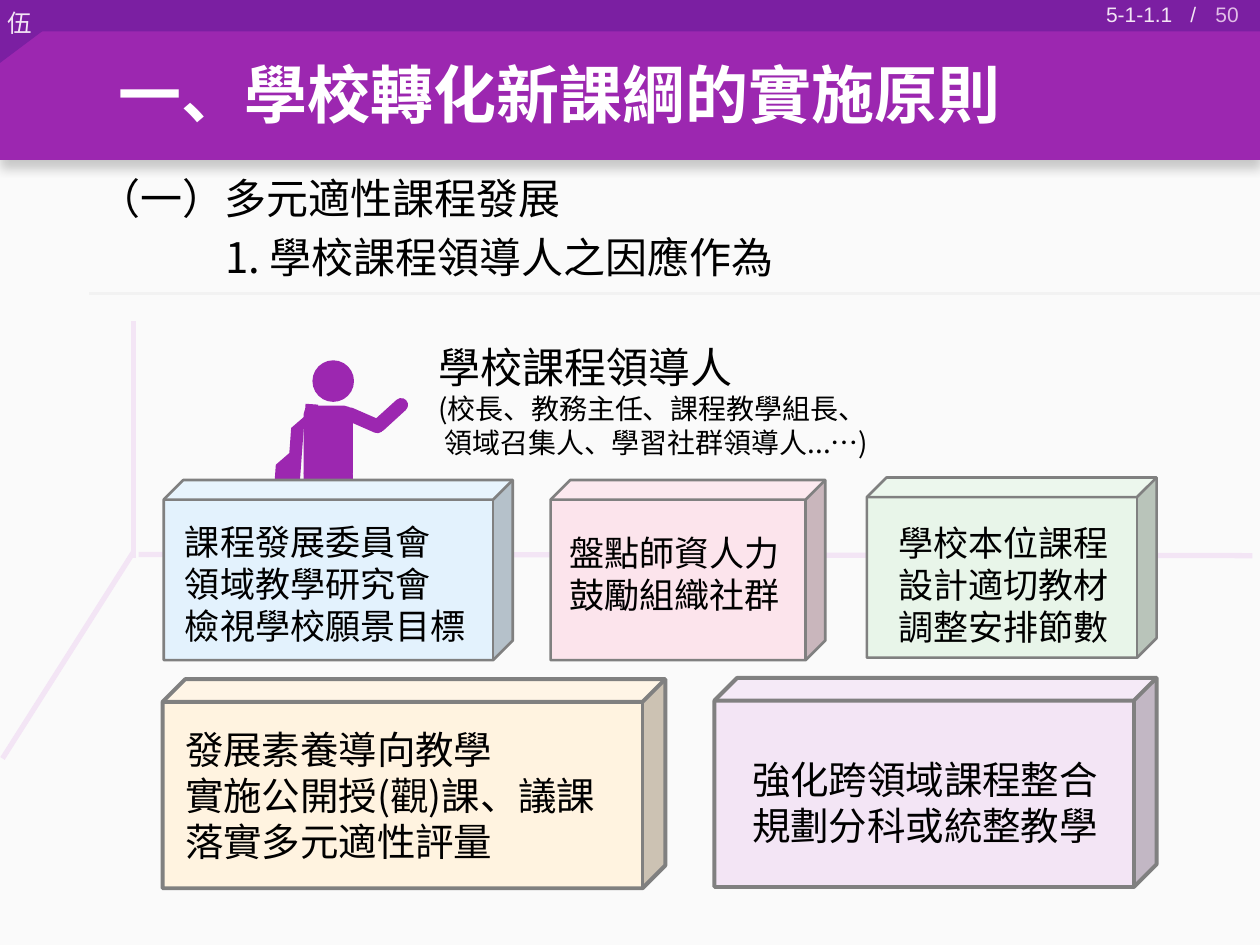
from dataclasses import dataclass
from typing import NamedTuple

from lxml.etree import SubElement
from pptx import Presentation
from pptx.dml.color import RGBColor
from pptx.enum.shapes import MSO_CONNECTOR as Connector, MSO_SHAPE as Preset
from pptx.enum.text import MSO_ANCHOR as Anchor, MSO_AUTO_SIZE as AutoSize, PP_ALIGN as Align
from pptx.oxml import parse_xml
from pptx.oxml.ns import nsdecls, qn
from pptx.util import Inches, Pt

CJK, LATIN = "Noto Sans CJK SC", "Arial"
BLACK, WHITE, PAPER, GREY, RULE = "000000", "FFFFFF", "FAFAFA", "808080", "F2F2F2"
PURPLE, DEEP_PURPLE, PALE_PURPLE, LILAC = "9C27B0", "7B1FA2", "F3E5F5", "E1BEE7"
COLUMNS, ROWS = 100, 75

presentation = Presentation()
presentation.slide_width, presentation.slide_height = Inches(10), Inches(7.5)
CELL = presentation.slide_width / COLUMNS
slide = presentation.slides.add_slide(presentation.slide_layouts[1])


class Area(NamedTuple):
    """Left, top, width and height in grid cells."""
    left: float
    top: float
    width: float
    height: float


@dataclass
class Line:
    text: str
    size: float
    indent: float = 0


@dataclass
class Block:
    area: Area
    fill: str
    border: float
    text_area: Area
    size: int
    lines: tuple[str, ...]


@dataclass
class Limb:
    area: Area
    preset: Preset = Preset.ROUNDED_RECTANGLE
    rounding: float | None = 0.5
    rotation: float = 0


BLOCKS = (
    Block(Area(13, 38.1, 27.7, 14.3), "E3F2FD", 1.5, Area(13.7, 40.5, 25.3, 11.1), 20,
          ("課程發展委員會", "領域教學研究會", "檢視學校願景目標")),
    Block(Area(43.7, 38.1, 21.8, 14.3), "FCE4EC", 1.5, Area(44.2, 41.4, 19.2, 7.7), 20,
          ("盤點師資人力", "鼓勵組織社群")),
    Block(Area(68.8, 37.9, 23, 14.3), "E8F5E9", 1.5, Area(70.3, 40.6, 22.3, 11.1), 20,
          ("學校本位課程", "設計適切教材", "調整安排節數")),
    Block(Area(56.7, 53.8, 35.1, 16.6), PALE_PURPLE, 2.25, Area(58.7, 59.2, 30.1, 8.4), 22,
          ("強化跨領域課程整合", "規劃分科或統整教學")),
    Block(Area(12.9, 53.9, 39.9, 16.6), "FFF3E0", 2.25, Area(13.7, 56.8, 38.5, 12.1), 22,
          ("發展素養導向教學", "實施公開授(觀)課、議課", "落實多元適性評量")),
)
LIMBS = (
    Limb(Area(24.8, 28.6, 3.3, 3.3), Preset.FLOWCHART_CONNECTOR, None),
    Limb(Area(24.1, 32.2, 3.9, 6), rounding=0.17),
    Limb(Area(24.1, 36.8, 1.7, 8.8)),
    Limb(Area(26.3, 36.8, 1.7, 8.8)),
    Limb(Area(30.4, 31.2, 1.1, 3.5), rotation=47.7),
    Limb(Area(28.3, 31.6, 1.1, 3.5), rotation=293.6),
)
ARM_START = (24.9, 33.3)
ARM_CURVES = (
    ((25, 32.8), (24.9, 32.5), (24.7, 32.4)),
    ((24.3, 32.2), (23.8, 32.6), (23.7, 32.9)),
    ((22.1, 36), (22.4, 38.3), (22.5, 38.6)),
    ((22.5, 39), (22.7, 39.2), (23, 39.2)),
    ((23.3, 39.2), (23.5, 39), (23.5, 38.7)),
    ((23.7, 37.3), (23.2, 35.7), (24.9, 33.3)),
)


def cells(count: float) -> int:
    return round(count * CELL)


def color(value: str) -> RGBColor:
    return RGBColor.from_string(value)


def apply(target, values: dict) -> None:
    for name, value in values.items():
        setattr(target, name, value)


def place(shape, area: Area) -> None:
    apply(shape, {name: cells(value) for name, value in area._asdict().items()})


def paint(shape, fill: str, border: float = 0):
    shape.shadow.inherit = False
    shape.fill.solid()
    shape.fill.fore_color.rgb = color(fill)
    if border:
        shape.line.color.rgb, shape.line.width = color(GREY), Pt(border)
    else:
        shape.line.fill.background()
    return shape


def add_preset(preset: Preset, area: Area, fill: str, border: float = 0, rounding=None):
    shape = slide.shapes.add_shape(preset, *map(cells, area))
    if rounding is not None:
        shape.adjustments[0] = rounding
    return paint(shape, fill, border)


def add_outline(points: list, fill: str):
    builder = slide.shapes.build_freeform(*points[0], scale=CELL)
    builder.add_line_segments(points[1:], close=True)
    return paint(builder.convert_to_shape(), fill)


def add_line(start: tuple, end: tuple, stroke: str, width: float) -> None:
    line = slide.shapes.add_connector(Connector.STRAIGHT, *map(cells, start + end))
    line.line.color.rgb, line.line.width = color(stroke), Pt(width)
    SubElement(line._element.spPr, qn("a:effectLst"))


def shadow(blur: float, distance: float, opacity: int):
    return parse_xml(
        f'<a:effectLst {nsdecls("a")}><a:outerShdw blurRad="{Pt(blur)}" dist="{Pt(distance)}" '
        f'dir="5400000" algn="t" rotWithShape="0"><a:srgbClr val="{BLACK}">'
        f'<a:alpha val="{opacity * 1000}"/></a:srgbClr></a:outerShdw></a:effectLst>')


def style_run(run, size: float, ink: str, font: str, bold: bool = False) -> None:
    apply(run.font, {"size": Pt(size), "bold": bold, "name": font})
    run.font.color.rgb = color(ink)
    SubElement(run._r.get_or_add_rPr(), qn("a:ea"), typeface=font)


def write_lines(frame, lines: list[Line], space_after: float = 0) -> None:
    """Fill a frame with black text at a fixed line pitch of 1.2 times its size."""
    apply(frame, {"word_wrap": True, "auto_size": AutoSize.NONE, "margin_top": cells(0.8)})
    for number, line in enumerate(lines):
        paragraph = frame.add_paragraph() if number else frame.paragraphs[0]
        properties = paragraph._p.get_or_add_pPr()
        apply(paragraph, {"line_spacing": Pt(line.size * 1.2), "space_before": Pt(0),
                          "space_after": Pt(space_after), "alignment": Align.LEFT})
        properties.set("marL", str(cells(line.indent)))
        properties.set("indent", "0")
        SubElement(properties, qn("a:buNone"))
        run = paragraph.add_run()
        run.text = line.text
        style_run(run, line.size, BLACK, CJK)


def add_text(area: Area, lines: list[Line]) -> None:
    write_lines(slide.shapes.add_textbox(*map(cells, area)).text_frame, lines)


def add_label(area: Area, text: str, size: float, ink: str, font: str, align=Align.LEFT):
    frame = slide.shapes.add_textbox(*map(cells, area)).text_frame
    apply(frame, {"word_wrap": True, "vertical_anchor": Anchor.MIDDLE})
    paragraph = frame.paragraphs[0]
    paragraph.alignment = align
    run = paragraph.add_run()
    run.text = text
    style_run(run, size, ink, font)
    return paragraph


def draw_header() -> None:
    band = add_preset(Preset.RECTANGLE, Area(0, 0, COLUMNS, 12.7), PURPLE)
    band._element.spPr.replace(band._element.spPr.find(qn("a:effectLst")), shadow(6, 4, 20))
    add_preset(Preset.RECTANGLE, Area(0, 0, COLUMNS, 2.5), DEEP_PURPLE)
    add_outline([(0, 2.5), (0, 4.6), (3.8, 2.5)], DEEP_PURPLE)
    add_label(Area(-0.4, 0.1, 5, 3.4), "伍", 14, PALE_PURPLE, CJK)
    add_label(Area(76, -0.9, 23.3, 4), "50", 12, LILAC, LATIN, Align.RIGHT)
    section = add_label(Area(86.8, -0.9, 9.7, 4), "5-1-1.1\t/", 12, PALE_PURPLE, LATIN)
    tabs = SubElement(section._p.get_or_add_pPr(), qn("a:tabLst"))
    SubElement(tabs, qn("a:tab"), pos=str(cells(6.7)), algn="l")


def fill_placeholders() -> None:
    title, body = slide.placeholders
    for placeholder, area in ((title, Area(8.4, 2.1, 86.5, 10.6)),
                              (body, Area(6.8, 12.9, 72.3, 9.7))):
        place(placeholder, area)
        slide.shapes._spTree.append(placeholder._element)
    apply(title.text_frame, {"text": "一、學校轉化新課綱的實施原則", "word_wrap": True,
                             "auto_size": AutoSize.NONE, "vertical_anchor": Anchor.MIDDLE})
    paragraph = title.text_frame.paragraphs[0]
    paragraph.alignment = Align.LEFT
    run = paragraph.runs[0]
    style_run(run, 36, WHITE, CJK, bold=True)
    run._r.rPr.find(qn("a:solidFill")).addnext(shadow(4, 3, 30))
    write_lines(body.text_frame, [Line("（一）多元適性課程發展", 24),
                                  Line("1. 學校課程領導人之因應作為", 24, 10.1)], space_after=5)


def curve_points(start: tuple, curves: tuple, steps: int = 8) -> list:
    """Sample a chain of cubic Bezier curves."""
    points = [start]
    for controls in curves:
        corners = (points[-1], *controls)
        for step in range(1, steps + 1):
            t = step / steps
            weights = ((1 - t) ** 3, 3 * t * (1 - t) ** 2, 3 * t ** 2 * (1 - t), t ** 3)
            points.append(tuple(sum(w * corner[axis] for w, corner in zip(weights, corners))
                                for axis in (0, 1)))
    return points


def draw_leader() -> None:
    for limb in LIMBS:
        shape = add_preset(limb.preset, limb.area, PURPLE, rounding=limb.rounding)
        shape.rotation = limb.rotation
    add_outline(curve_points(ARM_START, ARM_CURVES), PURPLE).rotation = 4.2
    add_text(Area(33.8, 26.3, 42.2, 10.4), [
        Line("學校課程領導人", 24), Line("(校長、教務主任、課程教學組長、", 16),
        Line("領域召集人、學習社群領導人...…)", 16, 0.5)])


def draw_block(block: Block) -> None:
    add_preset(Preset.CUBE, block.area, block.fill, block.border, rounding=0.109)
    add_text(block.text_area, [Line(text, block.size) for text in block.lines])


def main() -> None:
    slide.background.fill.solid()
    slide.background.fill.fore_color.rgb = color(PAPER)
    draw_header()
    for start, end in (((11, 44), (99.4, 44.1)), ((10.6, 43.8), (0.2, 60.2)),
                       ((10.6, 44.3), (10.6, 25.5))):
        add_line(start, end, PALE_PURPLE, 3)
    draw_leader()
    for block in BLOCKS:
        draw_block(block)
    fill_placeholders()
    add_line((7.1, 23.3), (COLUMNS, 23.3), RULE, 1.5)
    presentation.save("out.pptx")


if __name__ == "__main__":
    main()
